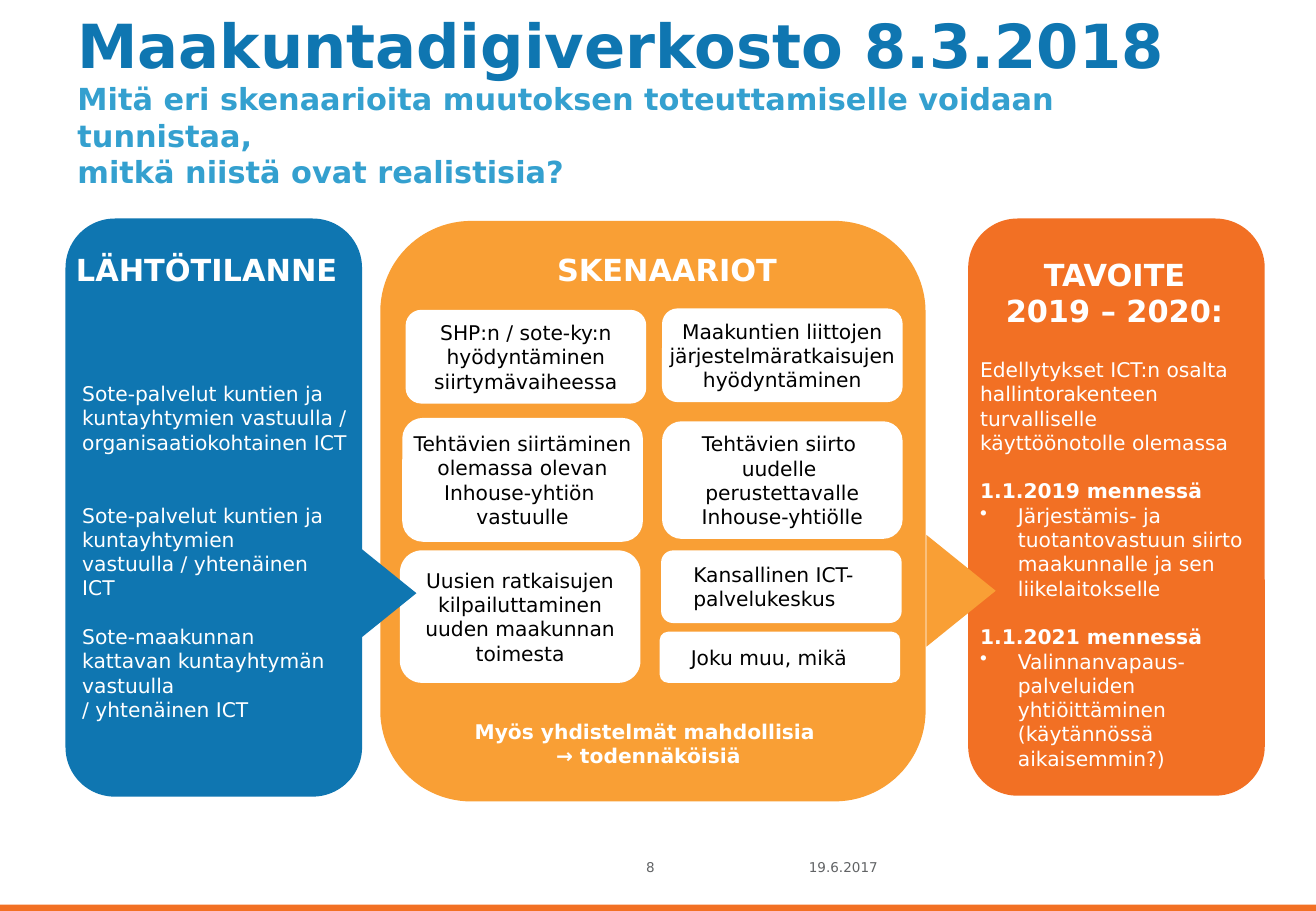
from lxml.etree import SubElement
from pptx import Presentation
from pptx.dml.color import RGBColor
from pptx.enum.shapes import MSO_SHAPE
from pptx.enum.text import MSO_ANCHOR, PP_ALIGN
from pptx.oxml.ns import qn
from pptx.util import Cm, Pt

BLUE = RGBColor(0x0F, 0x76, 0xB1)
SKY = RGBColor(0x34, 0xA0, 0xCF)
AMBER = RGBColor(0xF9, 0x9F, 0x35)
ORANGE = RGBColor(0xF2, 0x70, 0x24)
GREY = RGBColor(0x61, 0x63, 0x65)
WHITE = RGBColor(0xFF, 0xFF, 0xFF)
BLACK = RGBColor(0, 0, 0)
FONT = "DejaVu Sans"
MID, LEFT = PP_ALIGN.CENTER, PP_ALIGN.LEFT
ROUND, PEAK = MSO_SHAPE.ROUNDED_RECTANGLE, MSO_SHAPE.ISOSCELES_TRIANGLE

WIDE, HIGH = 27.51, 19.05
CARD = 5.03
TITLE = "Maakuntadigiverkosto 8.3.2018"
ASK = [
    "Mitä eri skenaarioita muutoksen toteuttamiselle voidaan tunnistaa,",
    "mitkä niistä ovat realistisia?",
]
PANELS = [
    (7.95, 4.62, 11.4, 12.14, AMBER),
    (20.24, 4.57, 6.2, 12.07, ORANGE),
    (1.37, 4.57, 6.2, 12.09, BLUE),
]
PEAKS = [(6.81, 11.68, BLUE), (18.92, 11.63, AMBER)]
HEADS = [
    (7.72, 12.45, "SKENAARIOT"),
    (1.02, 6.6, "LÄHTÖTILANNE"),
]
CARDS = [
    (8.48, 6.48, 1.96, MID, ["SHP:n / sote-ky:n hyödyntäminen siirtymävaiheessa"]),
    (13.84, 6.45, 1.96, MID, ["Maakuntien liittojen järjestelmäratkaisujen hyödyntäminen"]),
    (8.41, 8.74, 2.59, MID,
     ["Tehtävien siirtäminen olemassa olevan Inhouse-yhtiön ", "vastuulle"]),
    (13.84, 8.81, 2.46, MID,
     ["Tehtävien siirto ", "uudelle ", "perustettavalle Inhouse-yhtiölle"]),
    (8.36, 11.51, 2.77, MID, ["Uusien ratkaisujen kilpailuttaminen uuden maakunnan toimesta"]),
    (13.82, 11.51, 1.52, LEFT, ["Kansallinen ICT-palvelukeskus"]),
    (13.79, 13.21, 1.07, LEFT, ["Joku muu, mikä"]),
]
START = [
    (6.22, ["Sote-palvelut kuntien ja kuntayhtymien vastuulla / organisaatiokohtainen ICT"]),
    (5.92, ["Sote-palvelut kuntien ja kuntayhtymien vastuulla / yhtenäinen ICT"]),
    (5.92, ["Sote-maakunnan kattavan kuntayhtymän vastuulla", "/ yhtenäinen ICT"]),
]
GOAL = [
    ("TAVOITE", dict(size=18, bold=True, align=MID)),
    ("2019 – 2020:", dict(size=18, bold=True, align=MID)),
    ("Edellytykset ICT:n osalta hallintorakenteen turvalliselle käyttöönotolle olemassa",
     dict(gap=16.8)),
    ("1.1.2019 mennessä", dict(bold=True, gap=14.4)),
    ("Järjestämis- ja tuotantovastuun siirto maakunnalle ja sen liikelaitokselle",
     dict(bullet=True)),
    ("1.1.2021 mennessä", dict(bold=True, gap=14.4)),
    ("Valinnanvapaus-palveluiden yhtiöittäminen (käytännössä aikaisemmin?)",
     dict(bullet=True)),
]
NOTE = ["Myös yhdistelmät mahdollisia ", "→ todennäköisiä"]
FOOT = [(13.26, "8"), (16.66, "19.6.2017")]

deck = Presentation()
deck.slide_width, deck.slide_height = Cm(WIDE), Cm(HIGH)
slide = deck.slides.add_slide(deck.slide_layouts[6])


def form(kind, x, y, w, h, fill):
    item = slide.shapes.add_shape(kind, Cm(x), Cm(y), Cm(w), Cm(h))
    item.shadow.inherit = False
    item.fill.solid()
    item.fill.fore_color.rgb = fill
    item.line.fill.background()
    return item


def box(x, y, w, h):
    frame = slide.shapes.add_textbox(Cm(x), Cm(y), Cm(w), Cm(h)).text_frame
    frame.word_wrap = True
    return frame


def write(frame, text, size=12, color=WHITE, bold=False, align=LEFT, gap=0, bullet=False):
    para = frame.add_paragraph() if frame.text else frame.paragraphs[0]
    para.alignment = align
    if bullet:
        props = para._p.get_or_add_pPr()
        props.set("marL", str(Cm(0.79)))
        props.set("indent", str(-Cm(0.79)))
        SubElement(props, qn("a:buChar")).set("char", "•")
    if gap:
        para.space_before = Pt(gap)
    run = para.add_run()
    run.text = text
    run.font.name, run.font.size, run.font.bold = FONT, Pt(size), bold
    run.font.color.rgb = color


form(MSO_SHAPE.RECTANGLE, 0, 18.92, WIDE, HIGH - 18.92, ORANGE)
for x, text in FOOT:
    write(box(x, 17.83, 2.44, 1.02), text, size=8, color=GREY)

head = box(1.37, 0.03, 24.77, 3.9)
write(head, TITLE, size=36, color=BLUE, bold=True)
for text in ASK:
    write(head, text, size=18, color=SKY, bold=True)

for panel in PANELS:
    form(ROUND, *panel)

for x, y, h, align, lines in CARDS:
    frame = form(ROUND, x, y, CARD, h, WHITE).text_frame
    frame.word_wrap = True
    frame.vertical_anchor = MSO_ANCHOR.MIDDLE
    frame.margin_top = frame.margin_bottom = frame.margin_right = 0
    frame.margin_left = Cm(0.6 if align == LEFT else 0)
    for text in lines:
        write(frame, text, color=BLACK, align=align)

for x, y, fill in PEAKS:
    form(PEAK, x, y, 2.34, 1.45, fill).rotation = 90

for x, w, text in HEADS:
    write(box(x, 5.13, w, 1.02), text, size=18, bold=True, align=MID)

for row, (w, lines) in enumerate(START):
    frame = box(1.47, 7.85 + 2.54 * row, w, 2.31)
    for text in lines:
        write(frame, text)

goal = box(20.24, 5.23, 6.12, 11.13)
for text, style in GOAL:
    write(goal, text, **style)

note = box(8.08, 14.91, 10.95, 1.8)
for text in NOTE:
    write(note, text, bold=True, align=MID)

deck.save("out.pptx")
